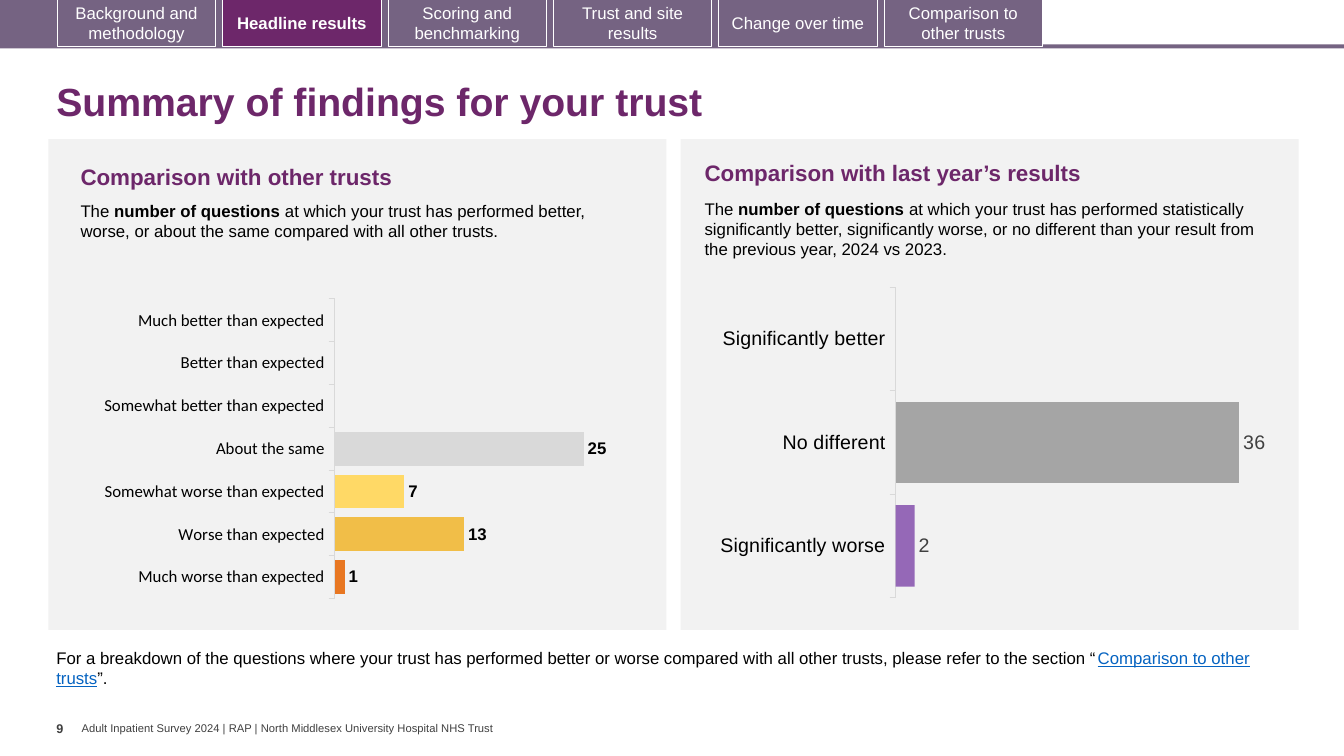
from dataclasses import dataclass
from typing import Any, Optional

from lxml import etree
from pptx import Presentation
from pptx import util as u
from pptx.chart import data as cd
from pptx.dml.color import RGBColor
from pptx.enum import chart as ce, shapes, text as te
from pptx.oxml import ns

PLUM = RGBColor(0x6D, 0x27, 0x6A)
MAUVE = RGBColor(0x75, 0x63, 0x82)
WHITE = RGBColor(0xFF, 0xFF, 0xFF)
BLACK = RGBColor(0, 0, 0)
PALE = RGBColor(0xF2, 0xF2, 0xF2)
DARK = RGBColor(0x40, 0x40, 0x40)
RULE = RGBColor(0xD9, 0xD9, 0xD9)
LINK = RGBColor(0x05, 0x63, 0xC1)
TEAL = RGBColor(0x41, 0x99, 0x99)
GREEN = RGBColor(0x5F, 0xBD, 0x83)
LIME = RGBColor(0xA9, 0xD1, 0x8E)
YELLOW = RGBColor(0xFF, 0xD9, 0x66)
GOLD = RGBColor(0xF1, 0xBE, 0x48)
ORANGE = RGBColor(0xE8, 0x77, 0x22)
BLUE = RGBColor(0x9D, 0xC3, 0xE6)
GREY = RGBColor(0xA5, 0xA5, 0xA5)
VIOLET = RGBColor(0x70, 0x30, 0xA0)

Area = tuple[float, float, float, float]
MID = te.MSO_ANCHOR.MIDDLE
TOP = te.MSO_ANCHOR.TOP


@dataclass
class Run:
    words: str
    bold: bool = False
    under: bool = False
    tint: Optional[RGBColor] = None


@dataclass
class Box:
    area: Area
    runs: list[Run]
    size: float = 12
    tint: RGBColor = BLACK
    form: Optional[dict[str, Any]] = None
    space: Optional[float] = None


@dataclass
class Bar:
    label: str
    value: Optional[int]
    tint: RGBColor


@dataclass
class Graph:
    area: Area
    plot: Area
    bars: list[Bar]
    face: str
    size: float
    top: int
    mark: dict[str, Any]
    ink: RGBColor
    alpha: Optional[int] = None


def apply(thing: Any, form: dict[str, Any]) -> None:
    for key, value in form.items():
        setattr(thing, key, value)


def place(area: Area) -> list[u.Length]:
    return [u.Inches(n) for n in area]


def style(font: Any, tint: RGBColor, **form: Any) -> None:
    apply(font, form)
    font.color.rgb = tint


def draw_block(slide: Any, area: Area, fill: Optional[RGBColor], edge: Optional[RGBColor] = None) -> Any:
    block = slide.shapes.add_shape(shapes.MSO_SHAPE.RECTANGLE, *place(area))
    block.shadow.inherit = False
    if fill is None:
        block.fill.background()
    else:
        block.fill.solid()
        block.fill.fore_color.rgb = fill
    if edge is None:
        block.line.fill.background()
    else:
        block.line.color.rgb = edge
        block.line.width = u.Pt(0.75)
    return block


def draw_tab(slide: Any, left: float, label: str, live: bool) -> None:
    tab = draw_block(slide, (left, -0.01, 1.57, 0.47), PLUM if live else None, WHITE)
    apply(tab.text_frame, {"word_wrap": True, "vertical_anchor": MID})
    para = tab.text_frame.paragraphs[0]
    para.alignment = te.PP_ALIGN.CENTER
    run = para.add_run()
    run.text = label
    style(run.font, WHITE, name="Arial", size=u.Pt(12), bold=live)


def draw_box(slide: Any, box: Box) -> None:
    frame = slide.shapes.add_textbox(*place(box.area)).text_frame
    apply(frame, {"word_wrap": True, "vertical_anchor": TOP, **(box.form or {})})
    para = frame.paragraphs[0]
    if box.space:
        para.line_spacing = box.space
    for part in box.runs:
        run = para.add_run()
        run.text = part.words
        style(run.font, part.tint or box.tint, name="Arial", size=u.Pt(box.size),
              bold=part.bold, underline=part.under)


def set_plot(chart: Any, plot: Area) -> None:
    host = chart.element.xpath(".//c:plotArea")[0]
    for old in host.findall(ns.qn("c:layout")):
        host.remove(old)
    outer = etree.Element(ns.qn("c:layout"))
    inner = etree.SubElement(outer, ns.qn("c:manualLayout"))
    rules = [("layoutTarget", "inner"), ("xMode", "edge"), ("yMode", "edge"), *zip("xywh", plot)]
    for tag, value in rules:
        etree.SubElement(inner, ns.qn(f"c:{tag}")).set("val", str(value))
    host.insert(0, outer)


def draw_graph(slide: Any, graph: Graph) -> None:
    data = cd.CategoryChartData()
    data.categories = [bar.label for bar in graph.bars]
    data.add_series("Series 1", [bar.value for bar in graph.bars])
    chart = slide.shapes.add_chart(ce.XL_CHART_TYPE.BAR_CLUSTERED, *place(graph.area), data).chart
    apply(chart, {"has_legend": False, "has_title": False})
    form = {"name": graph.face, "size": u.Pt(graph.size)}
    style(chart.font, BLACK, **form)
    set_plot(chart, graph.plot)
    apply(chart.value_axis, {"visible": False, "has_major_gridlines": False,
                             "minimum_scale": 0, "maximum_scale": graph.top})
    axis = chart.category_axis
    apply(axis, {"reverse_order": True, "major_tick_mark": ce.XL_TICK_MARK.OUTSIDE})
    axis.format.line.color.rgb = RULE
    axis.format.line.width = u.Pt(0.75)
    style(axis.tick_labels.font, BLACK, **form)
    apply(chart.plots[0], {"gap_width": 27, "vary_by_categories": False})
    row = chart.plots[0].series[0]
    for i, bar in enumerate(graph.bars):
        fill = row.points[i].format.fill
        fill.solid()
        fill.fore_color.rgb = bar.tint
    if graph.alpha:
        last = chart.element.xpath(".//c:dPt[last()]//a:srgbClr")[0]
        etree.SubElement(last, ns.qn("a:alpha")).set("val", str(graph.alpha * 1000))
    labels = row.data_labels
    apply(labels, {"show_value": True, "position": ce.XL_LABEL_POSITION.OUTSIDE_END,
                   "number_format": "0", "number_format_is_linked": False})
    style(labels.font, graph.ink, name="Arial", size=u.Pt(graph.size), **graph.mark)


TABS = ["Background and methodology", "Headline results", "Scoring and benchmarking",
        "Trust and site results", "Change over time", "Comparison to other trusts"]
LEAD = [Run("The "), Run("number of questions ", bold=True)]
FLAT = dict.fromkeys(["margin_left", "margin_right", "margin_top", "margin_bottom"], 0)
BOXES = [
    Box((0.81, 7.16, 6.1, 0.13), [Run("Adult Inpatient Survey 2024 | RAP | North Middlesex University Hospital NHS Trust")],
        8, DARK, {**FLAT, "vertical_anchor": MID}),
    Box((0.46, 0.67, 12.49, 0.72), [Run("Summary of findings for your trust", True)],
        28, PLUM, {"vertical_anchor": MID}, 0.9),
    Box((0.7, 1.57, 5.52, 0.37), [Run("Comparison with other trusts", True)], 16, PLUM),
    Box((0.7, 1.94, 5.29, 0.71), LEAD + [Run(
        "at which your trust has performed better, worse, or about the same compared with all other trusts.")]),
    Box((6.89, 1.53, 5.48, 0.37), [Run("Comparison with last year’s results", True)], 16, PLUM),
    Box((6.89, 1.92, 5.74, 0.71), LEAD + [Run(
        "at which your trust has performed statistically significantly better, significantly worse, "
        "or no different than your result from the previous year, 2024 vs 2023.")]),
    Box((0.46, 6.38, 12.21, 0.5), [
        Run("For a breakdown of the questions where your trust has performed better or worse compared "
            "with all other trusts, please refer to the section “"),
        Run("Comparison to other trusts", under=True, tint=LINK), Run("”.")]),
    Box((0.56, 7.1, 0.25, 0.4), [Run("9", True)], 9, DARK,
        {"margin_left": 0, "margin_right": 0, "word_wrap": False}),
]
GRAPHS = [
    Graph((0.41, 2.72, 6.23, 3.41), (0.467, 0.072, 0.476, 0.872), [
        Bar("Much better than expected", None, TEAL),
        Bar("Better than expected", None, GREEN),
        Bar("Somewhat better than expected", None, LIME),
        Bar("About the same", 25, RULE),
        Bar("Somewhat worse than expected", 7, YELLOW),
        Bar("Worse than expected", 13, GOLD),
        Bar("Much worse than expected", 1, ORANGE),
    ], "Calibri", 12, 30, {"bold": True}, BLACK),
    Graph((6.64, 2.73, 6.23, 3.39), (0.36, 0.035, 0.608, 0.909), [
        Bar("Significantly better", None, BLUE),
        Bar("No different", 36, GREY),
        Bar("Significantly worse", 2, VIOLET),
    ], "Arial", 14, 40, {"bold": False}, DARK, 71),
]


def main() -> None:
    deck = Presentation()
    apply(deck, {"slide_width": u.Inches(13.33), "slide_height": u.Inches(7.5)})
    slide = deck.slides.add_slide(deck.slide_layouts[6])
    draw_block(slide, (-0.03, 0.44, 13.36, 0.04), MAUVE)
    draw_block(slide, (-0.03, 0, 10.37, 0.47), MAUVE)
    for i, label in enumerate(TABS):
        draw_tab(slide, 0.57 + 1.64 * i, label, i == 1)
    for left in (0.48, 6.75):
        draw_block(slide, (left, 1.38, 6.13, 4.87), PALE)
    for box in BOXES:
        draw_box(slide, box)
    for graph in GRAPHS:
        draw_graph(slide, graph)
    deck.save("out.pptx")


if __name__ == "__main__":
    main()
